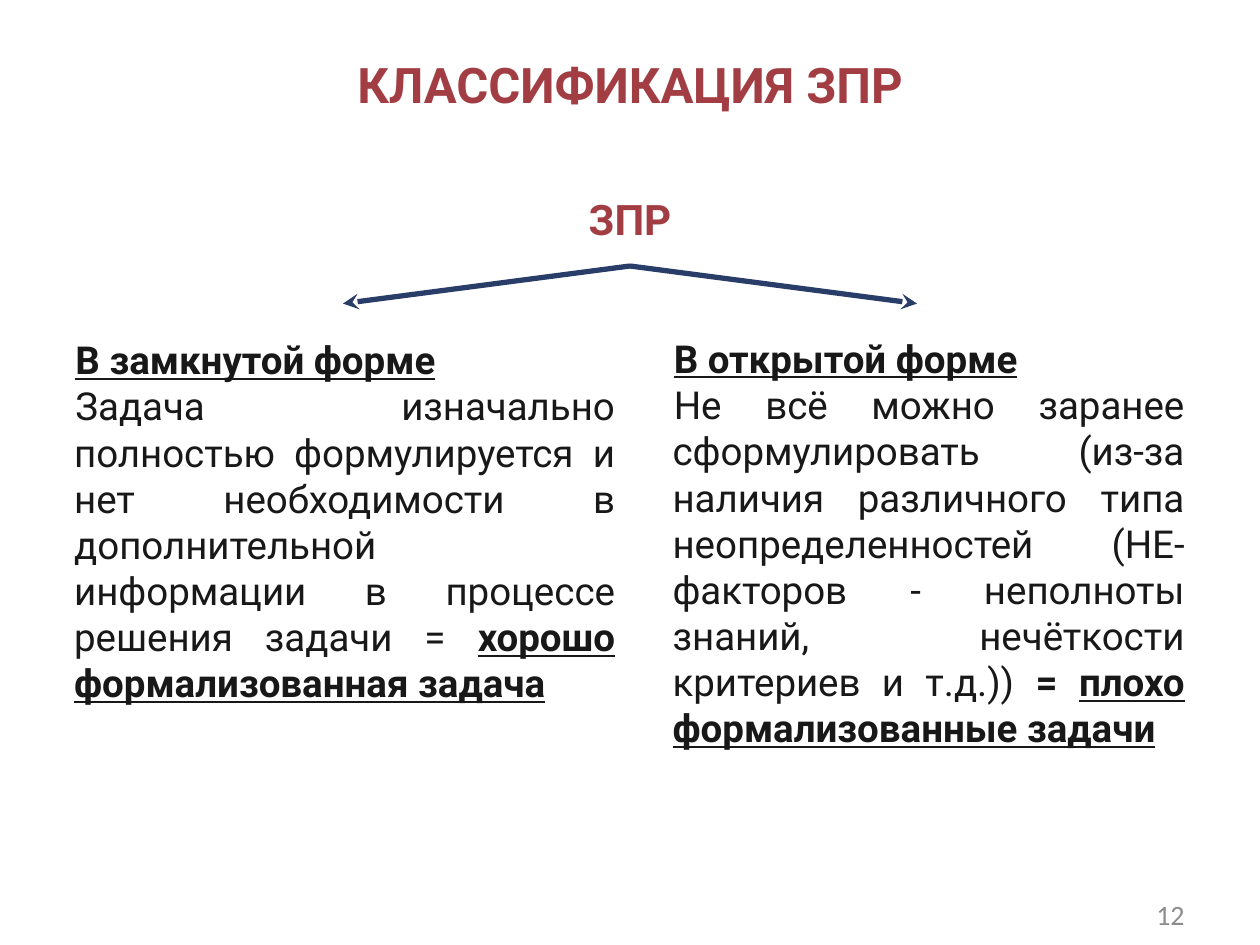
from dataclasses import dataclass

from lxml import etree
from pptx import Presentation
from pptx.dml.color import RGBColor
from pptx.enum.shapes import MSO_CONNECTOR
from pptx.enum.text import MSO_ANCHOR, PP_ALIGN
from pptx.oxml.ns import qn
from pptx.util import Pt

RED = RGBColor(0xA2, 0x3E, 0x43)
NAVY = RGBColor(0x29, 0x3D, 0x69)
BLACK = RGBColor(0x18, 0x18, 0x18)
GRAY = RGBColor(0x8C, 0x8C, 0x8C)

LEFT, CENTER, RIGHT, JUSTIFY = (
    PP_ALIGN.LEFT, PP_ALIGN.CENTER, PP_ALIGN.RIGHT, PP_ALIGN.JUSTIFY)
TOP, MIDDLE = MSO_ANCHOR.TOP, MSO_ANCHOR.MIDDLE
STRAIGHT = MSO_CONNECTOR.STRAIGHT
FIRST_LINE = Pt(0.72)


@dataclass
class Box:
    left: float
    top: float
    width: float
    height: float


@dataclass
class TaskForm:
    box: Box
    heading: str
    text: str
    equals: str
    equals_bold: bool
    conclusion: str


FORMS = [
    TaskForm(Box(35.3, 188.6, 323.3, 220.3), "В замкнутой форме",
             "Задача изначально полностью формулируется и нет необходимости "
             "в дополнительной информации в процессе решения задачи ",
             "= ", False, "хорошо формализованная задача"),
    TaskForm(Box(377.3, 187.9, 306.7, 273.6), "В открытой форме",
             "Не всё можно заранее сформулировать (из-за наличия различного "
             "типа неопределенностей (НЕ-факторов - неполноты знаний, "
             "нечёткости критериев и т.д.)) ",
             "= ", True, "плохо формализованные задачи"),
]


def add_frame(slide, box: Box, anchor=TOP):
    s = slide.shapes.add_textbox(
        Pt(box.left), Pt(box.top), Pt(box.width), Pt(box.height))
    tf = s.text_frame
    tf.word_wrap = True
    tf.vertical_anchor = anchor
    return tf


def add_run(p, text: str, *, size=22, font="Roboto", color=BLACK,
            bold=False, underline=False) -> None:
    r = p.add_run()
    r.text = text
    r.font.size = Pt(size)
    r.font.name = font
    r.font.color.rgb = color
    r.font.bold = bold
    r.font.underline = underline


def add_label(slide, box: Box, text: str, *, align=CENTER, anchor=MIDDLE,
              **style) -> None:
    p = add_frame(slide, box, anchor).paragraphs[0]
    p.alignment = align
    add_run(p, text, **style)


def add_form(slide, form: TaskForm) -> None:
    tf = add_frame(slide, form.box)
    head, body = tf.paragraphs[0], tf.add_paragraph()
    for p, align in ((head, LEFT), (body, JUSTIFY)):
        p.alignment = align
        p._p.get_or_add_pPr().set("indent", str(FIRST_LINE))
    add_run(head, form.heading, bold=True, underline=True)
    add_run(body, form.text)
    add_run(body, form.equals, bold=form.equals_bold)
    add_run(body, form.conclusion, bold=True, underline=True)


def add_arrow(slide, x1: float, y1: float, x2: float, y2: float) -> None:
    s = slide.shapes.add_connector(STRAIGHT, Pt(x1), Pt(y1), Pt(x2), Pt(y2))
    s.line.color.rgb = NAVY
    s.line.width = Pt(3)
    etree.SubElement(s.line._get_or_add_ln(), qn("a:tailEnd"), type="stealth")
    etree.SubElement(s._element.spPr, qn("a:effectLst"))


def main() -> None:
    prs = Presentation()
    prs.slide_width, prs.slide_height = Pt(720), Pt(540)
    slide = prs.slides.add_slide(prs.slide_layouts[6])

    # Title and page number
    add_label(slide, Box(36, 14.4, 648, 67), "КЛАССИФИКАЦИЯ ЗПР",
              size=28, color=RED, bold=True)
    add_label(slide, Box(643.7, 508.3, 40.3, 28.8), "12", align=RIGHT,
              size=16, font="Calibri", color=GRAY)

    # Root of the classification with its two branches
    for dx in (-164, 164):
        add_arrow(slide, 360, 152, 360 + dx, 173.5)
    add_label(slide, Box(286, 107, 148, 54.7), "ЗПР", anchor=TOP,
              size=24, color=RED, bold=True)

    # Task forms
    for form in FORMS:
        add_form(slide, form)

    prs.save("out.pptx")


if __name__ == "__main__":
    main()
